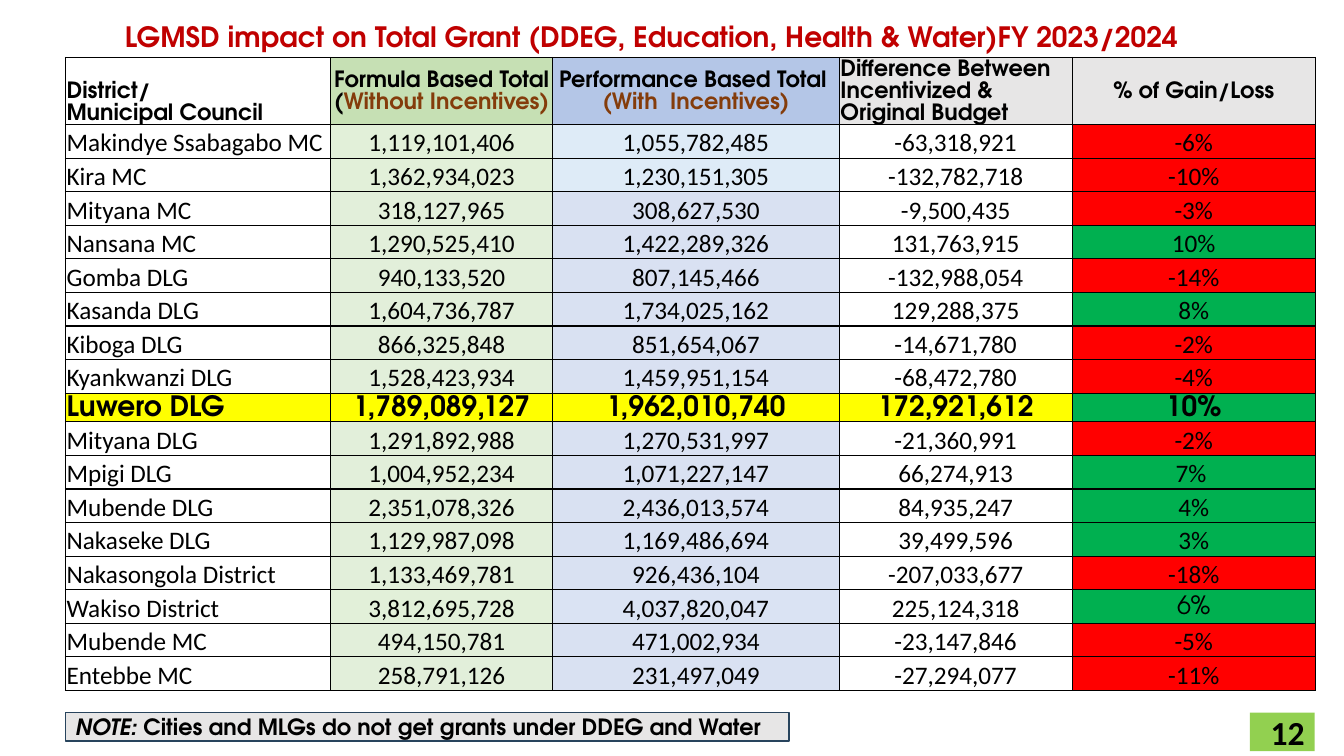
import pptx
import pptx.dml.color
import pptx.enum.shapes
import pptx.enum.text
import pptx.oxml
import pptx.oxml.ns
import pptx.util

Cm = pptx.util.Cm
RGBColor = pptx.dml.color.RGBColor
ALIGN = pptx.enum.text.PP_ALIGN
ANCHOR = pptx.enum.text.MSO_ANCHOR

BLACK = RGBColor(0x00, 0x00, 0x00)
TITLE_RED = RGBColor(0xC0, 0x00, 0x00)
BROWN = RGBColor(0x84, 0x3C, 0x0B)
GREY = RGBColor(0xE7, 0xE6, 0xE6)
NOTE_EDGE = RGBColor(0x28, 0x44, 0x5D)
PAGE_GREEN = RGBColor(0x92, 0xD0, 0x50)
LOSS_RED = RGBColor(0xFF, 0x00, 0x00)
GAIN_GREEN = RGBColor(0x00, 0xB0, 0x50)
YELLOW = RGBColor(0xFF, 0xFF, 0x00)
HEAD_GREEN = RGBColor(0xC6, 0xE0, 0xB4)
HEAD_BLUE = RGBColor(0xB4, 0xC6, 0xE7)
SOFT_GREEN = RGBColor(0xE2, 0xEF, 0xDA)
PALE_GREEN = RGBColor(0xE2, 0xF0, 0xD9)
SOFT_BLUE = RGBColor(0xD9, 0xE1, 0xF2)
PALE_BLUE = RGBColor(0xDE, 0xEB, 0xF7)
WAKISO_BLUE = RGBColor(0xDA, 0xE3, 0xF3)

DISPLAY = "TeX Gyre Adventor"
BODY = "Calibri"

COLUMN_WIDTHS = (6.68, 5.6, 7.22, 5.87, 6.13)
HEADER_HEIGHT, FIRST_HEIGHT, GRANT_HEIGHT = 1.45, 0.79, 0.69

HEADERS = (
    ([[("District/", BLACK)], [("Municipal Council", BLACK)]], None),
    ([[("Formula Based Total (", BLACK), ("Without Incentives)", BROWN)]], HEAD_GREEN),
    ([[("Performance Based Total ", BLACK)], [("(With  Incentives)", BROWN)]], HEAD_BLUE),
    ([[("Difference Between Incentivized & Original Budget", BLACK)]], GREY),
    ([[("% of Gain/Loss", BLACK)]], GREY),
)
HEADER_ALIGNS = (ALIGN.LEFT, ALIGN.CENTER, ALIGN.CENTER, ALIGN.LEFT, ALIGN.CENTER)

GRANTS = (
    ("Makindye Ssabagabo MC", "1,119,101,406", "1,055,782,485", "-63,318,921", "-6%"),
    ("Kira MC", "1,362,934,023", "1,230,151,305", "-132,782,718", "-10%"),
    ("Mityana MC", "318,127,965", "308,627,530", "-9,500,435", "-3%"),
    ("Nansana MC", "1,290,525,410", "1,422,289,326", "131,763,915", "10%"),
    ("Gomba DLG", "940,133,520", "807,145,466", "-132,988,054", "-14%"),
    ("Kasanda DLG", "1,604,736,787", "1,734,025,162", "129,288,375", "8%"),
    ("Kiboga DLG", "866,325,848", "851,654,067", "-14,671,780", "-2%"),
    ("Kyankwanzi DLG", "1,528,423,934", "1,459,951,154", "-68,472,780", "-4%"),
    ("Luwero DLG", "1,789,089,127", "1,962,010,740", "172,921,612", "10%"),
    ("Mityana DLG", "1,291,892,988", "1,270,531,997", "-21,360,991", "-2%"),
    ("Mpigi DLG", "1,004,952,234", "1,071,227,147", "66,274,913", "7% "),
    ("Mubende DLG", "2,351,078,326", "2,436,013,574", "84,935,247", "4%"),
    ("Nakaseke DLG", "1,129,987,098", "1,169,486,694", "39,499,596", "3%"),
    ("Nakasongola District", "1,133,469,781", "926,436,104", "-207,033,677", "-18%"),
    ("Wakiso District", "3,812,695,728", "4,037,820,047", "225,124,318", "6%"),
    ("Mubende MC", "494,150,781", "471,002,934", "-23,147,846", "-5%"),
    ("Entebbe MC", "258,791,126", "231,497,049", "-27,294,077", "-11%"),
)
HIGHLIGHTED = "Luwero DLG"
ROW_TINTS = {
    "Makindye Ssabagabo MC": (PALE_GREEN, PALE_BLUE),
    "Kira MC": (PALE_GREEN, PALE_BLUE),
    "Wakiso District": (PALE_GREEN, WAKISO_BLUE),
    HIGHLIGHTED: (YELLOW, YELLOW),
}


def add_run(paragraph, text, size, font, color=BLACK, bold=True, italic=False):
    run = paragraph.add_run()
    run.text = text
    run.font.size = pptx.util.Pt(size)
    run.font.name = font
    run.font.bold = bold
    run.font.italic = italic
    run.font.color.rgb = color


def set_borders(cell):
    properties = cell._tc.get_or_add_tcPr()
    for side in ("lnL", "lnR", "lnT", "lnB"):
        properties.append(pptx.oxml.parse_xml(
            f'<a:{side} {pptx.oxml.ns.nsdecls("a")} w="12700"><a:solidFill>'
            f'<a:srgbClr val="{BLACK}"/></a:solidFill></a:{side}>'))


def fill_cell(cell, paragraphs, fill, align, anchor, size, font, bold):
    set_borders(cell)
    if fill is None:
        cell.fill.background()
    else:
        cell.fill.solid()
        cell.fill.fore_color.rgb = fill
    cell.margin_left = cell.margin_right = cell.margin_top = Cm(0.03)
    cell.margin_bottom = 0
    cell.vertical_anchor = anchor
    for index, runs in enumerate(paragraphs):
        frame = cell.text_frame
        paragraph = frame.add_paragraph() if index else frame.paragraphs[0]
        paragraph.alignment = align
        paragraph.line_spacing = pptx.util.Pt(size * 0.98) if bold else 1.07
        for text, color in runs:
            add_run(paragraph, text, size, font, color, bold)


def grant_fills(grant):
    name, gain = grant[0], grant[-1]
    formula, performance = ROW_TINTS.get(name, (SOFT_GREEN, SOFT_BLUE))
    plain = YELLOW if name == HIGHLIGHTED else None
    outcome = LOSS_RED if gain.startswith("-") else GAIN_GREEN
    return plain, formula, performance, plain, outcome


def add_grant_table(slide, left, top, width, height):
    table = slide.shapes.add_table(
        len(GRANTS) + 1, len(HEADERS), Cm(left), Cm(top), Cm(width), Cm(height)).table
    table.first_row = table.horz_banding = False
    for column, column_width in zip(table.columns, COLUMN_WIDTHS):
        column.width = Cm(column_width)
    heights = [HEADER_HEIGHT, FIRST_HEIGHT] + [GRANT_HEIGHT] * (len(GRANTS) - 1)
    for row, row_height in zip(table.rows, heights):
        row.height = Cm(row_height)

    anchors = [ANCHOR.BOTTOM] + [ANCHOR.MIDDLE] * (len(HEADERS) - 1)
    for column, (paragraphs, fill) in enumerate(HEADERS):
        fill_cell(table.cell(0, column), paragraphs, fill, HEADER_ALIGNS[column],
                  anchors[column], 16, DISPLAY, True)
    for row, grant in enumerate(GRANTS, start=1):
        highlighted = grant[0] == HIGHLIGHTED
        for column, (value, fill) in enumerate(zip(grant, grant_fills(grant))):
            display = highlighted or (grant[0] == "Wakiso District" and column == 4)
            fill_cell(table.cell(row, column), [[(value, BLACK)]], fill,
                      ALIGN.CENTER if column else ALIGN.LEFT, anchors[column],
                      20 if highlighted else 18, DISPLAY if display else BODY, highlighted)


def add_title(slide, left, top, width, height):
    title = slide.shapes.add_textbox(Cm(left), Cm(top), Cm(width), Cm(height)).text_frame
    title.word_wrap = True
    title.vertical_anchor = ANCHOR.MIDDLE
    title.paragraphs[0].line_spacing = 0.9
    add_run(title.paragraphs[0],
            "LGMSD impact on Total Grant (DDEG, Education, Health & Water)FY 2023/2024",
            20, DISPLAY, TITLE_RED)


def add_panel(slide, left, top, width, height, fill, align, edge=None):
    panel = slide.shapes.add_shape(
        pptx.enum.shapes.MSO_SHAPE.RECTANGLE, Cm(left), Cm(top), Cm(width), Cm(height))
    panel.shadow.inherit = False
    panel.fill.solid()
    panel.fill.fore_color.rgb = fill
    if edge is None:
        panel.line.fill.background()
    else:
        panel.line.color.rgb = edge
        panel.line.width = pptx.util.Pt(1)
    panel.text_frame.word_wrap = True
    panel.text_frame.vertical_anchor = ANCHOR.MIDDLE
    paragraph = panel.text_frame.paragraphs[0]
    paragraph.alignment = align
    return paragraph


def add_note(slide, left, top, width, height):
    note = add_panel(slide, left, top, width, height, GREY, ALIGN.LEFT, NOTE_EDGE)
    add_run(note, "NOTE:", 16, DISPLAY, italic=True)
    add_run(note, " Cities and MLGs do not get grants under DDEG and Water", 16, DISPLAY)


def add_page_number(slide, left, top, width, height):
    number = add_panel(slide, left, top, width, height, PAGE_GREEN, ALIGN.RIGHT)
    add_run(number, "12", 24, BODY)


def main():
    deck = pptx.Presentation()
    deck.slide_width, deck.slide_height = Cm(33.87), Cm(19.05)
    slide = deck.slides.add_slide(deck.slide_layouts[6])
    add_title(slide, 2.9, 0.48, 27.43, 0.97)
    add_page_number(slide, 31.5, 17.96, 1.63, 0.97)
    add_grant_table(slide, 1.65, 1.45, sum(COLUMN_WIDTHS), 16.38)
    add_note(slide, 1.65, 17.96, 18.24, 0.71)
    deck.save("out.pptx")


if __name__ == "__main__":
    main()
